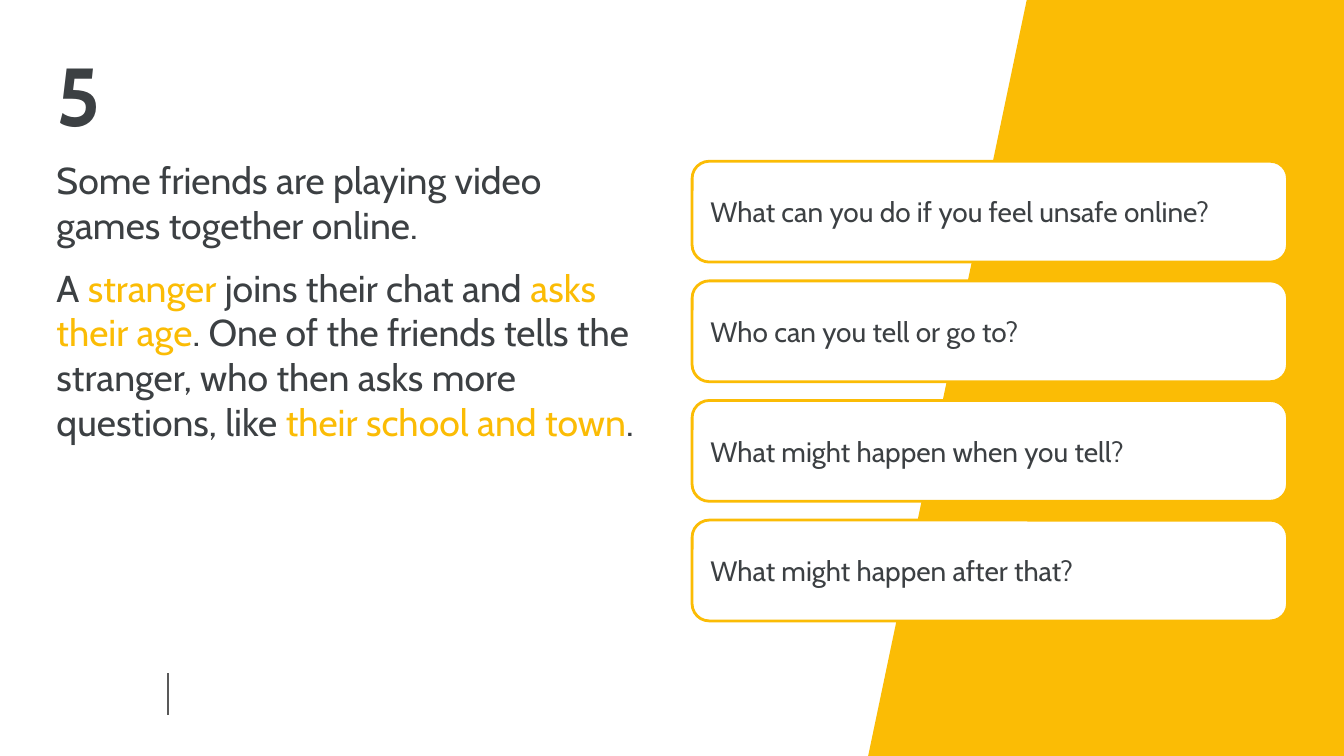
from lxml import etree
from pptx import Presentation
from pptx import util as u
from pptx.dml.color import RGBColor
from pptx.enum import shapes, text
from pptx.oxml import ns

INK = RGBColor(0x3C, 0x40, 0x43)
YELLOW = RGBColor(0xFB, 0xBC, 0x05)
WHITE = RGBColor(0xFF, 0xFF, 0xFF)
GREY = RGBColor(0x59, 0x59, 0x59)

WIDTH = 10
HEIGHT = WIDTH * 9 / 16
MARGIN = 0.42
CARD_LEFT, CARD_TOP = 5.15, 1.2
CARD_WIDTH, CARD_HEIGHT = WIDTH - MARGIN - CARD_LEFT, 0.75
ROW_STEP = 0.89
STORY_WIDTH = 4.35

QUESTIONS = [
    "What can you do if you feel unsafe online?",
    "Who can you tell or go to?",
    "What might happen when you tell?",
    "What might happen after that?",
]
STORY = [
    (1.17, 0.75, [("Some friends are playing video games together online.", INK)]),
    (1.97, 1.9, [
        ("A ", INK),
        ("stranger", YELLOW),
        (" joins their chat and ", INK),
        ("asks their age", YELLOW),
        (". One of the friends tells the stranger, who then asks more questions, like ", INK),
        ("their school and town", YELLOW),
        (".", INK),
    ]),
]


def format_frame(frame, inset, anchor):
    settings = dict.fromkeys(
        ("margin_left", "margin_top", "margin_right", "margin_bottom"), u.Inches(inset))
    settings.update(word_wrap=True, auto_size=text.MSO_AUTO_SIZE.NONE, vertical_anchor=anchor)
    for name, value in settings.items():
        setattr(frame, name, value)


def add_run(paragraph, words, color, size, bold=False):
    paragraph.alignment = text.PP_ALIGN.LEFT
    run = paragraph.add_run()
    run.text = words
    for name, value in {"name": "Cabin", "size": u.Pt(size), "bold": bold}.items():
        setattr(run.font, name, value)
    run.font.color.rgb = color


presentation = Presentation()
presentation.slide_width = u.Inches(WIDTH)
presentation.slide_height = u.Inches(HEIGHT)
slide = presentation.slides.add_slide(presentation.slide_layouts[5])

title = slide.shapes.title
title_place = {"left": MARGIN, "top": 0.41, "width": 6.04, "height": 0.75}
for name, value in title_place.items():
    setattr(title, name, u.Inches(value))
format_frame(title.text_frame, 0, text.MSO_ANCHOR.TOP)
heading = title.text_frame.paragraphs[0]
heading.line_spacing = 0.9
add_run(heading, "5", INK, 44, True)

divider = slide.shapes.add_connector(
    shapes.MSO_CONNECTOR.STRAIGHT,
    u.Inches(WIDTH / 8), u.Inches(5.01), u.Inches(WIDTH / 8), u.Inches(5.32))
divider.line.color.rgb = GREY
divider.line.width = u.Pt(0.75)
etree.SubElement(divider.element.spPr, ns.qn("a:effectLst"))

builder = slide.shapes.build_freeform(u.Inches(7.64), 0)
corners = [(WIDTH, 0), (WIDTH, HEIGHT), (6.46, HEIGHT)]
builder.add_line_segments([(u.Inches(x), u.Inches(y)) for x, y in corners], close=True)
panel = builder.convert_to_shape()
panel.shadow.inherit = False
panel.fill.solid()
panel.fill.fore_color.rgb = YELLOW
panel.line.fill.background()

for row, question in enumerate(QUESTIONS):
    card = slide.shapes.add_shape(
        shapes.MSO_SHAPE.ROUNDED_RECTANGLE,
        u.Inches(CARD_LEFT), u.Inches(CARD_TOP + row * ROW_STEP),
        u.Inches(CARD_WIDTH), u.Inches(CARD_HEIGHT))
    card.adjustments[0] = 0.17
    card.shadow.inherit = False
    card.fill.solid()
    card.fill.fore_color.rgb = WHITE
    card.line.color.rgb = YELLOW
    card.line.width = u.Pt(1.5)
    format_frame(card.text_frame, 0.1, text.MSO_ANCHOR.MIDDLE)
    add_run(card.text_frame.paragraphs[0], question, INK, 15)

for top, height, runs in STORY:
    story = slide.shapes.add_textbox(
        u.Inches(MARGIN), u.Inches(top), u.Inches(STORY_WIDTH), u.Inches(height))
    format_frame(story.text_frame, 0, text.MSO_ANCHOR.TOP)
    paragraph = story.text_frame.paragraphs[0]
    paragraph.space_after = u.Pt(10)
    for words, color in runs:
        add_run(paragraph, words, color, 20)

presentation.save("out.pptx")
